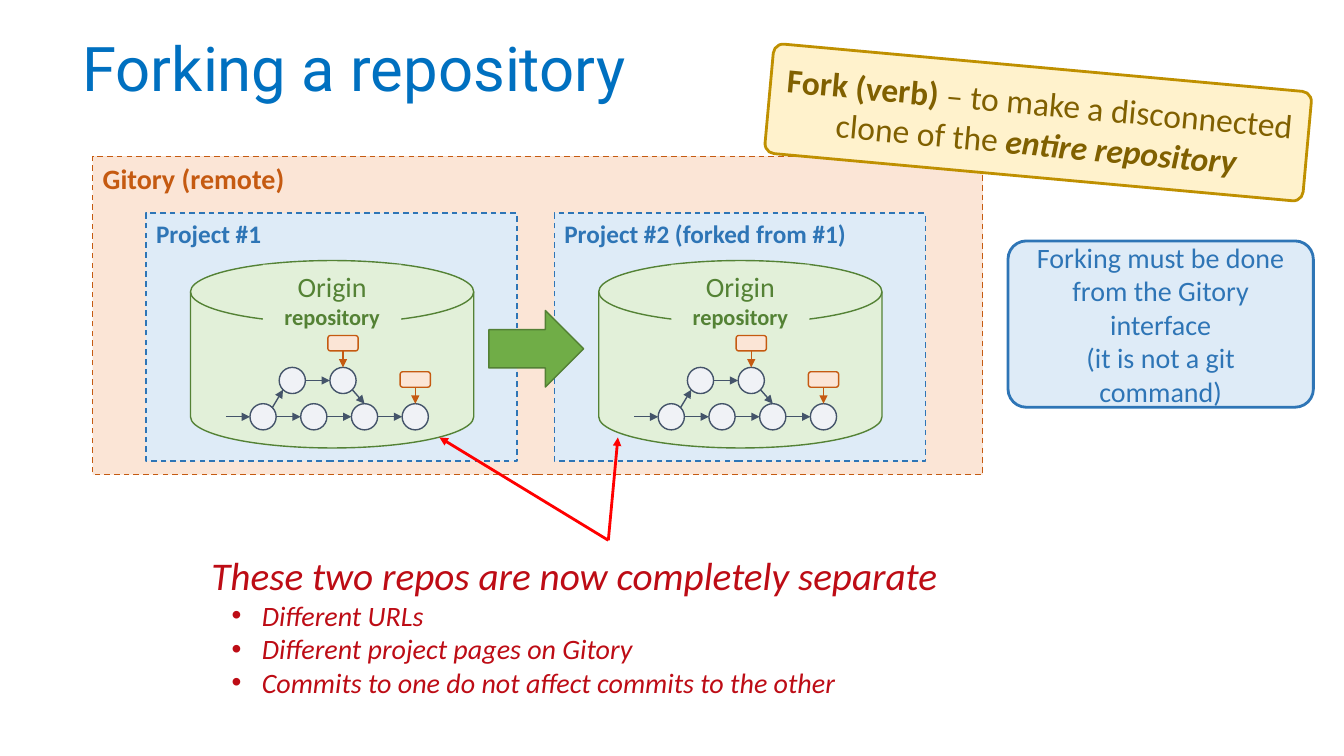
import math
from dataclasses import dataclass
from typing import Any, Optional

import pptx
import pptx.dml.color
import pptx.enum.dml
import pptx.enum.shapes
import pptx.enum.text
import pptx.oxml.ns
import pptx.util
from lxml import etree

RGB = pptx.dml.color.RGBColor
SHAPE = pptx.enum.shapes.MSO_SHAPE
ANCHOR = pptx.enum.text.MSO_ANCHOR
ALIGN = pptx.enum.text.PP_ALIGN
qn = pptx.oxml.ns.qn

TITLE_BLUE = RGB(0x00, 0x70, 0xC0)
PEACH = RGB(0xFB, 0xE5, 0xD6)
ORANGE = RGB(0xC5, 0x5A, 0x11)
PALE_BLUE = RGB(0xDE, 0xEB, 0xF7)
BLUE = RGB(0x2E, 0x75, 0xB6)
PALE_GREEN = RGB(0xE2, 0xF0, 0xD9)
GREEN = RGB(0x54, 0x82, 0x35)
ARROW_FILL = RGB(0x70, 0xAD, 0x47)
ARROW_EDGE = RGB(0x53, 0x80, 0x35)
COMMIT_FILL = RGB(0xF0, 0xF2, 0xF6)
SLATE = RGB(0x44, 0x54, 0x6A)
CREAM = RGB(0xFF, 0xF2, 0xCC)
GOLD = RGB(0xBF, 0x90, 0x00)
BROWN = RGB(0x80, 0x60, 0x00)
RED = RGB(0xFF, 0x00, 0x00)
CRIMSON = RGB(0xBD, 0x0C, 0x15)

# The grid has 160 columns and 90 rows; its cells are square.
WIDTH, HEIGHT = pptx.util.Inches(13.33), pptx.util.Inches(7.5)
COLUMN, ROW = WIDTH / 160, HEIGHT / 90


@dataclass(frozen=True)
class Point:
    column: float
    row: float


@dataclass(frozen=True)
class Area:
    column: float
    row: float
    columns: float
    rows: float


@dataclass(frozen=True)
class Look:
    fill: Optional[RGB] = None
    edge: Optional[RGB] = None
    weight: float = 1
    dashed: bool = False


@dataclass(frozen=True)
class Span:
    text: str
    size: float
    color: RGB
    bold: bool = False
    italic: bool = False
    font: str = "Calibri"


@dataclass(frozen=True)
class Para:
    spans: tuple[Span, ...]
    align: Any = ALIGN.LEFT
    bullet: bool = False
    after: float = 0
    spacing: float = 1


@dataclass(frozen=True)
class Link:
    """An arrow between two commits, leaving and arriving at angles in degrees."""
    start: Point
    leave: float
    end: Point
    arrive: float


def place(area: Area) -> list[int]:
    return [round(area.column * COLUMN), round(area.row * ROW),
            round(area.columns * COLUMN), round(area.rows * ROW)]


def write(box: Any, paras: list[Para], anchor: Any = ANCHOR.TOP) -> None:
    frame = box.text_frame
    frame.word_wrap = True
    frame.vertical_anchor = anchor
    for index, item in enumerate(paras):
        para = frame.add_paragraph() if index else frame.paragraphs[0]
        para.alignment = item.align
        para.line_spacing = item.spacing
        para.space_after = pptx.util.Pt(item.after)
        if item.bullet:
            properties = para._p.get_or_add_pPr()
            properties.set("marL", str(round(6 * COLUMN)))
            properties.set("indent", str(round(-3.6 * COLUMN)))
            etree.SubElement(properties, qn("a:buFont")).set("typeface", "Arial")
            etree.SubElement(properties, qn("a:buChar")).set("char", "•")
        for piece in item.spans:
            span = para.add_run()
            span.text = piece.text
            span.font.name = piece.font
            span.font.size = pptx.util.Pt(piece.size)
            span.font.color.rgb = piece.color
            span.font.bold = piece.bold
            span.font.italic = piece.italic


def draw_shape(shapes: Any, kind: Any, area: Area, look: Look,
               corner: Optional[float] = None) -> Any:
    shape = shapes.add_shape(kind, *place(area))
    shape.shadow.inherit = False
    if look.fill is None:
        shape.fill.background()
    else:
        shape.fill.solid()
        shape.fill.fore_color.rgb = look.fill
    if look.edge is None:
        shape.line.fill.background()
    else:
        shape.line.color.rgb = look.edge
        shape.line.width = pptx.util.Pt(look.weight)
    if look.dashed:
        shape.line.dash_style = pptx.enum.dml.MSO_LINE.DASH
    if corner is not None:
        shape.adjustments[0] = corner
    return shape


def draw_arrow(shapes: Any, start: Point, end: Point, color: RGB, weight: float = 1) -> Any:
    arrow = shapes.add_connector(
        pptx.enum.shapes.MSO_CONNECTOR.STRAIGHT,
        round(start.column * COLUMN), round(start.row * ROW),
        round(end.column * COLUMN), round(end.row * ROW))
    arrow.line.color.rgb = color
    arrow.line.width = pptx.util.Pt(weight)
    etree.SubElement(arrow.line._get_or_add_ln(), qn("a:tailEnd")).set("type", "triangle")
    etree.SubElement(arrow._element.spPr, qn("a:effectLst"))
    return arrow


RADIUS = 1.56


def rim(center: Point, degrees: float) -> Point:
    """The point of a commit's circle at an angle, anticlockwise from the right."""
    angle = math.radians(degrees)
    return Point(center.column + RADIUS * math.cos(angle),
                 center.row - RADIUS * math.sin(angle))


def draw_history(shapes: Any, left: float, top: float) -> None:
    main = [Point(left + 13.92 + 6.04 * index, top + 24.24) for index in range(4)]
    side = [Point(left + 17.4 + 6.04 * index, top + 19.92) for index in range(2)]
    for center in main + side:
        draw_shape(shapes, SHAPE.OVAL,
                   Area(center.column - RADIUS, center.row - RADIUS, 2 * RADIUS, 2 * RADIUS),
                   Look(COMMIT_FILL, SLATE))

    links = [Link(start, 0, end, 180) for start, end in zip(main, main[1:])]
    links += [Link(main[0], 45, side[0], 225), Link(side[0], 0, side[1], 180),
              Link(side[1], -45, main[2], 90)]
    for link in links:
        draw_arrow(shapes, rim(link.start, link.leave), rim(link.end, link.arrive), SLATE)
    draw_arrow(shapes, Point(left + 9.48, main[0].row), rim(main[0], 180), SLATE)

    for tip in (main[-1], side[-1]):
        tag = draw_shape(shapes, SHAPE.ROUNDED_RECTANGLE,
                         Area(tip.column - 1.8, tip.row - 5.36, 3.6, 1.84), Look(PEACH, ORANGE))
        pointer = draw_arrow(shapes, Point(tip.column, tip.row - 3.52), rim(tip, 90), ORANGE)
        pointer.begin_connect(tag, 2)


def draw_project(page: Any, name: str, left: float, top: float) -> None:
    frame = draw_shape(page.shapes, SHAPE.RECTANGLE, Area(left, top, 44.16, 29.52),
                       Look(PALE_BLUE, BLUE, dashed=True))
    write(frame, [Para((Span(name, 18, BLUE, bold=True),))])
    store = page.shapes.add_group_shape().shapes
    draw_shape(store, SHAPE.FLOWCHART_MAGNETIC_DISK,
               Area(left + 5.28, top + 5.64, 33.72, 22.32), Look(PALE_GREEN, GREEN))
    label = draw_shape(store, SHAPE.RECTANGLE,
                       Area(left + 13.92, top + 6.12, 16.44, 8.52), Look(PALE_GREEN))
    write(label, [Para((Span("Origin", 20, GREEN),), ALIGN.CENTER),
                  Para((Span("repository", 16, GREEN, bold=True),), ALIGN.CENTER)])
    draw_history(page.shapes.add_group_shape().shapes, left, top)


def main() -> None:
    deck = pptx.Presentation()
    deck.slide_width, deck.slide_height = WIDTH, HEIGHT
    page = deck.slides.add_slide(deck.slide_layouts[6])
    shapes = page.shapes

    title = shapes.add_textbox(*place(Area(8.64, 2.88, 104.52, 11.28)))
    write(title, [Para((Span("Forking a repository", 44, TITLE_BLUE, font="Roboto"),),
                       spacing=0.9)], ANCHOR.MIDDLE)

    remote = draw_shape(shapes, SHAPE.RECTANGLE, Area(11.04, 18.6, 105.96, 37.92),
                        Look(PEACH, ORANGE, dashed=True))
    write(remote, [Para((Span("Gitory (remote)", 20, ORANGE, bold=True),))])
    for index, name in enumerate(("Project #1", "Project #2 (forked from #1)")):
        draw_project(page, name, 17.4 + 48.6 * index, 25.38)
    fork = draw_shape(shapes, SHAPE.DOWN_ARROW, Area(59.28, 35.88, 9.12, 11.28),
                      Look(ARROW_FILL, ARROW_EDGE))
    fork.rotation = 270

    definition = draw_shape(shapes, SHAPE.ROUNDED_RECTANGLE, Area(91.44, 8.04, 64.32, 13.08),
                            Look(CREAM, GOLD, 2), 0.09)
    definition.rotation = 5.2
    write(definition, [Para((Span("Fork (verb)", 24, BROWN, bold=True),
                             Span(" – to make a disconnected clone of the ", 24, BROWN),
                             Span("entire repository", 24, BROWN, bold=True, italic=True)),
                            ALIGN.CENTER, after=6)], ANCHOR.MIDDLE)

    remarks = draw_shape(shapes, SHAPE.ROUNDED_RECTANGLE, Area(23.28, 64.32, 98.28, 18.6),
                         Look(), 0.13)
    points = ("Different URLs", "Different project pages on Gitory",
              "Commits to one do not affect commits to the other")
    write(remarks, [Para((Span("These two repos are now completely separate", 28, CRIMSON,
                               italic=True),))]
          + [Para((Span(point, 20, CRIMSON, italic=True),), bullet=True) for point in points])
    for column in (52.32, 73.56):
        pointer = draw_arrow(shapes, Point(72.42, 64.32), Point(column, 52.08), RED, 2)
        pointer.begin_connect(remarks, 0)

    note = draw_shape(shapes, SHAPE.ROUNDED_RECTANGLE, Area(120, 28.68, 36.36, 19.8),
                      Look(PALE_BLUE, BLUE, 2), 0.11)
    lines = ("Forking must be done from the Gitory interface", "(it is not a git command)")
    write(note, [Para((Span(line, 20, BLUE),), ALIGN.CENTER) for line in lines], ANCHOR.MIDDLE)

    deck.save("out.pptx")


if __name__ == "__main__":
    main()
